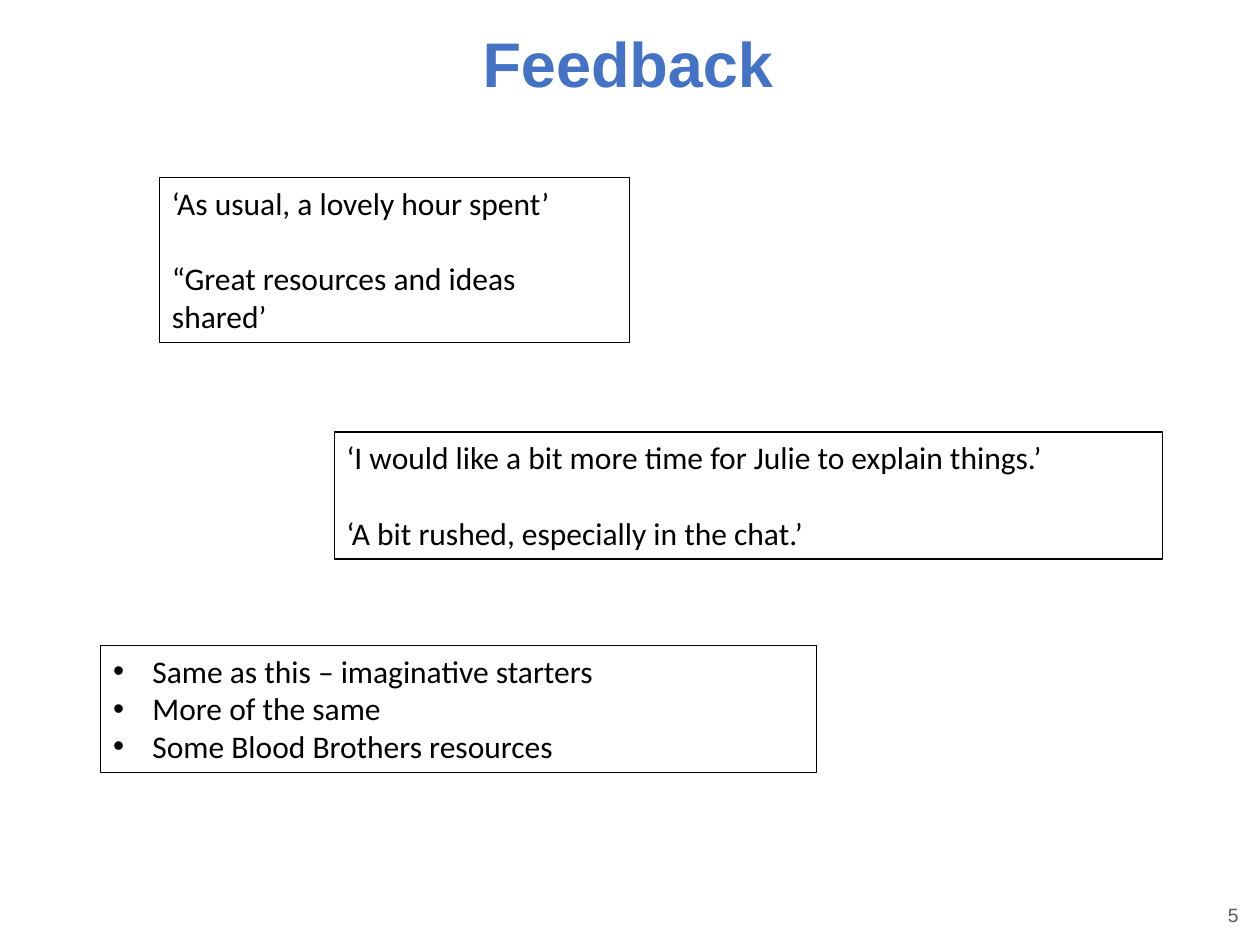
from dataclasses import dataclass

from pptx import Presentation
from pptx import util as u
from pptx.dml.color import RGBColor
from pptx.enum import shapes, text
from pptx.oxml import parse_xml
from pptx.oxml.ns import nsdecls

Pt = u.Pt


@dataclass(frozen=True)
class Theme:
    heading_font: str = "Arial"
    body_font: str = "Calibri"
    heading: RGBColor = RGBColor(0x44, 0x72, 0xC4)
    ink: RGBColor = RGBColor(0, 0, 0)
    muted: RGBColor = RGBColor(0x59, 0x59, 0x59)
    heading_size: int = 36
    body_size: int = 18
    number_size: int = 11
    border: float = 0.75
    quote_gap: float = 21.6
    indent: float = 22.5


THEME = Theme()


def place(part, box):
    part.left, part.top, part.width, part.height = (Pt(v) for v in box)


def set_frame(frame, side, edge):
    frame.word_wrap = True
    frame.auto_size = text.MSO_AUTO_SIZE.NONE
    frame.vertical_anchor = text.MSO_ANCHOR.TOP
    frame.margin_left = frame.margin_right = Pt(side)
    frame.margin_top = frame.margin_bottom = Pt(edge)


def add_words(paragraph, words, font, size, color, align, bold=False):
    paragraph.alignment = align
    run = paragraph.add_run()
    run.text = words
    run.font.name = font
    run.font.size = Pt(size)
    run.font.bold = bold
    run.font.color.rgb = color


def add_bullet(paragraph):
    props = paragraph._p.get_or_add_pPr()
    props.set("marL", str(Pt(THEME.indent)))
    props.set("indent", str(-Pt(THEME.indent)))
    props.append(parse_xml(f'<a:buFont {nsdecls("a")} typeface="Arial"/>'))
    props.append(parse_xml(f'<a:buChar {nsdecls("a")} char="•"/>'))


def fill_comment_box(panel, box, comments, gap=0, bulleted=False):
    """Outlined panel with one paragraph for each comment."""
    place(panel, box)
    panel.fill.background()
    panel.line.color.rgb = THEME.ink
    panel.line.width = Pt(THEME.border)
    frame = panel.text_frame
    set_frame(frame, 7.2, 3.6)
    for i, comment in enumerate(comments):
        paragraph = frame.add_paragraph() if i else frame.paragraphs[0]
        if bulleted:
            add_bullet(paragraph)
        paragraph.space_before = Pt(gap if i else 0)
        add_words(paragraph, comment, THEME.body_font, THEME.body_size,
                  THEME.ink, text.PP_ALIGN.LEFT)


def add_quotes(slide, box, quotes):
    left, top, width, height = (Pt(v) for v in box)
    panel = slide.shapes.add_shape(
        shapes.MSO_SHAPE.RECTANGLE, left, top, width, height)
    panel.shadow.inherit = False
    fill_comment_box(panel, box, quotes, gap=THEME.quote_gap)


def add_requests(slide, box, requests):
    fill_comment_box(slide.placeholders[1], box, requests, bulleted=True)


def add_heading(slide, box, words):
    heading = slide.shapes.title
    place(heading, box)
    set_frame(heading.text_frame, 0, 0)
    add_words(heading.text_frame.paragraphs[0], words, THEME.heading_font,
              THEME.heading_size, THEME.heading, text.PP_ALIGN.CENTER, bold=True)


def add_page_number(slide, box, number):
    page = slide.shapes.add_textbox(*(Pt(v) for v in box))
    set_frame(page.text_frame, 7.2, 3.6)
    add_words(page.text_frame.paragraphs[0], number, THEME.heading_font,
              THEME.number_size, THEME.muted, text.PP_ALIGN.RIGHT)


def main():
    deck = Presentation()
    deck.slide_width, deck.slide_height = Pt(720), Pt(540)
    slide = deck.slides.add_slide(deck.slide_layouts[1])

    # Heading
    add_heading(slide, (100.3, 14, 517, 87), "Feedback")

    # What went well
    add_quotes(slide, (91.2, 101.5, 268.6, 94.3), [
        "‘As usual, a lovely hour spent’",
        "“Great resources and ideas shared’",
    ])

    # What could be better
    add_quotes(slide, (191, 246.8, 473.2, 72.7), [
        "‘I would like a bit more time for Julie to explain things.’",
        "‘A bit rushed, especially in the chat.’",
    ])

    # Requests for next time
    add_requests(slide, (57.4, 368.7, 409, 72.7), [
        "Same as this – imaginative starters",
        "More of the same",
        "Some Blood Brothers resources",
    ])

    # Page number
    add_page_number(slide, (685.4, 512.6, 29.5, 20.9), "5")

    deck.save("out.pptx")


if __name__ == "__main__":
    main()
